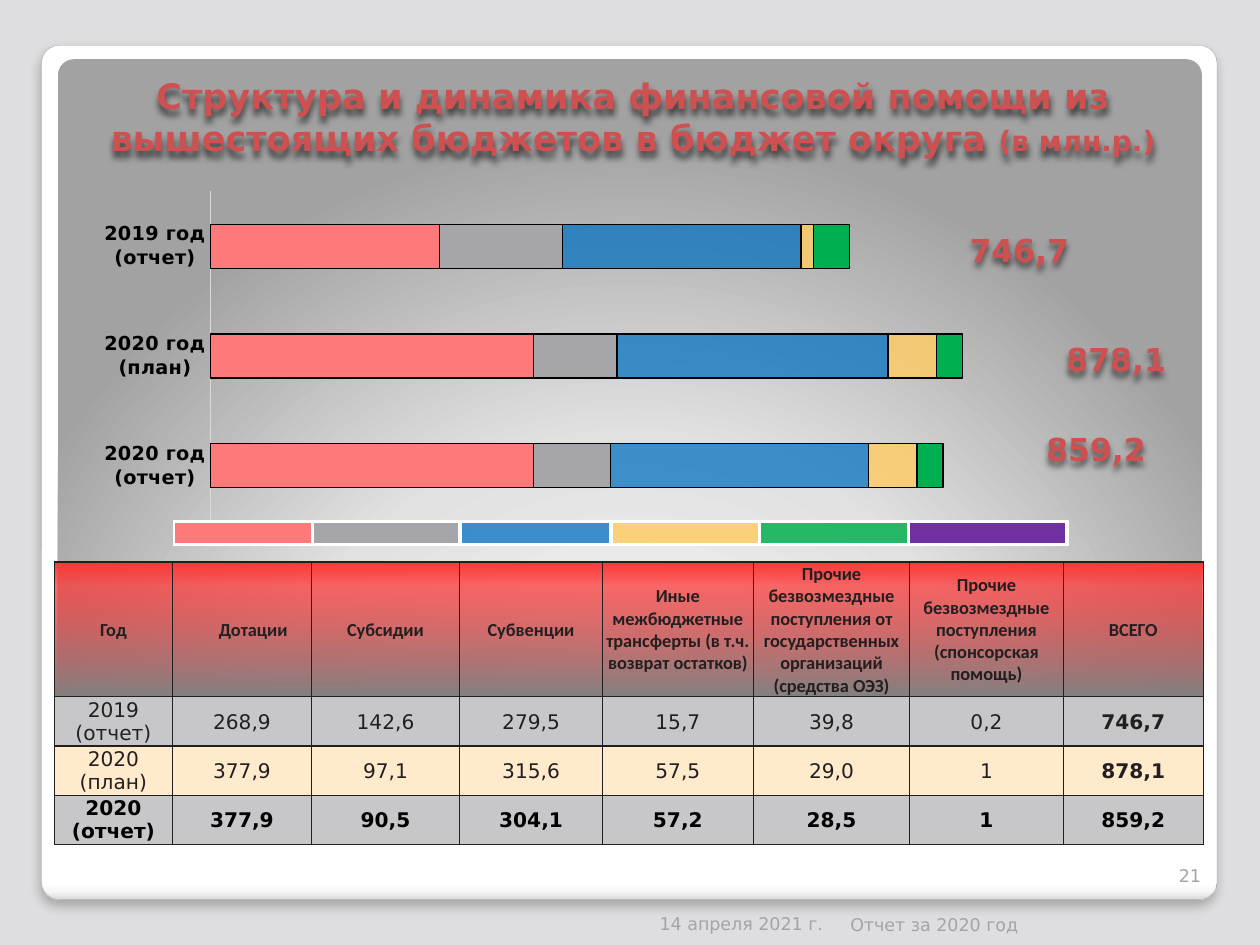
from dataclasses import dataclass
from typing import Optional, Sequence, Union

import lxml.etree
import pptx
import pptx.chart.data
import pptx.dml.color
import pptx.enum.chart
import pptx.enum.shapes
import pptx.enum.text
import pptx.oxml
import pptx.oxml.ns
import pptx.util

Inches, Pt = pptx.util.Inches, pptx.util.Pt
RGB = pptx.dml.color.RGBColor.from_string
ALIGN, ANCHOR = pptx.enum.text.PP_ALIGN, pptx.enum.text.MSO_ANCHOR
NS = pptx.oxml.ns.nsdecls("a")
qn = pptx.oxml.ns.qn


@dataclass(frozen=True)
class Color:
    rgb: str
    alpha: int = 100


@dataclass(frozen=True)
class Gradient:
    stops: Sequence[tuple[int, Color]]
    angle: Optional[int] = None  # None means circular, centred below the panel


@dataclass(frozen=True)
class Theme:
    font: str = "DejaVu Sans"
    head_font: str = "Calibri"
    accent: str = "CE5050"
    ink: str = "231F20"
    black: str = "000000"
    muted: str = "A4A4A6"
    back: str = "DEDEE0"
    white: str = "FFFFFF"
    axis: str = "D9D9D9"
    frame: str = "A4A4A4"
    gray_row: str = "C7C7CA"
    cream_row: str = "FFEACC"
    title: float = 20
    unit: float = 16
    total: float = 18
    body: float = 11.5
    category: float = 11
    head: float = 10.5
    small: float = 10
    frame_fill: Gradient = Gradient([(0, Color("FFFFFF")), (98, Color("FFFFFF")),
                                     (99, Color("F7F7F7")), (100, Color("DADADA"))], 90)
    glow: Gradient = Gradient([(0, Color("FFFFFF")), (55, Color("E1E1E1")),
                               (100, Color("A2A2A2"))])
    head_fill: Gradient = Gradient([(0, Color("828282")), (82, Color("FF3434", 72)),
                                    (100, Color("FE3737"))], 270)


@dataclass(frozen=True)
class Series:
    values: Sequence[int]
    fill: Color
    legend: Color


@dataclass(frozen=True)
class Label:
    text: str
    box: tuple[float, float, float, float]
    size: float
    color: str
    align: ALIGN = ALIGN.CENTER
    strong: bool = False


T = Theme()
SERIES = [
    Series((100, 100, 71), Color("FE7979"), Color("FE7979")),
    Series((24, 26, 38), Color("A5A5AA"), Color("A5A5AA")),
    Series((80, 84, 74), Color("0070C0", 73), Color("0070C0", 74)),
    Series((15, 15, 4), Color("FFCC66", 82), Color("FFCC66", 83)),
    Series((8, 8, 11), Color("00B050"), Color("00B050", 84)),
    Series((0, 0, 0), Color("7030A0"), Color("7030A0")),
]
LABELS = [
    Label("21", (9.13, 6.68, 0.5, 0.4), T.small, T.muted, ALIGN.RIGHT),
    Label("14 апреля 2021 г.", (4.13, 7.06, 2.5, 0.4), T.small, T.muted, ALIGN.RIGHT),
    Label("Отчет за 2020 год", (6.65, 7.07, 2.5, 0.4), T.small, T.muted, ALIGN.LEFT),
    Label("746,7", (7.54, 1.78, 1.1, 0.4), T.total, T.accent, strong=True),
    Label("878,1", (8.31, 2.65, 1.1, 0.4), T.total, T.accent, strong=True),
    Label("859,2", (8.15, 3.36, 1.1, 0.4), T.total, T.accent, strong=True),
]
ROWS = [
    ["Год", "Дотации", "Субсидии", "Субвенции",
     "Иные межбюджетные трансферты (в т.ч. возврат остатков)",
     "Прочие безвозмездные поступления от государственных организаций (средства ОЭЗ)",
     "Прочие безвозмездные поступления (спонсорская помощь)", "ВСЕГО"],
    ["2019 (отчет)", "268,9", "142,6", "279,5", "15,7", "39,8", "0,2", "746,7"],
    ["2020 (план)", "377,9", "97,1", "315,6", "57,5", "29,0", "1", "878,1"],
    ["2020 (отчет)", "377,9", "90,5", "304,1", "57,2", "28,5", "1", "859,2"],
]


def color_xml(c: Color) -> str:
    return f'<a:srgbClr val="{c.rgb}"><a:alpha val="{c.alpha * 1000}"/></a:srgbClr>'


def paint(fill, props, paint_: Union[Color, Gradient]) -> None:
    """Fill a shape, cell or series whose property element is props."""
    if isinstance(paint_, Color):
        xml = f"<a:solidFill {NS}>{color_xml(paint_)}</a:solidFill>"
    else:
        stops = "".join(f'<a:gs pos="{pos * 1000}">{color_xml(c)}</a:gs>' for pos, c in paint_.stops)
        shade = ('<a:path path="circle"><a:fillToRect l="50000" t="175000" r="50000" b="-75000"/></a:path>'
                 if paint_.angle is None else f'<a:lin ang="{paint_.angle * 60000}" scaled="0"/>')
        xml = f'<a:gradFill {NS} rotWithShape="1"><a:gsLst>{stops}</a:gsLst>{shade}</a:gradFill>'
    fill.background()
    props.replace(props.find(qn("a:noFill")), pptx.oxml.parse_xml(xml))


def add_shadow(sp, alpha: int, blur: float, dist: float) -> None:
    sp._element.spPr.append(pptx.oxml.parse_xml(
        f'<a:effectLst {NS}><a:outerShdw blurRad="{Pt(blur)}" dist="{Pt(dist)}" dir="5400000" '
        f'rotWithShape="0">{color_xml(Color(T.black, alpha))}</a:outerShdw></a:effectLst>'))


def style(font, size: float, color: str, bold: bool = False, name: str = T.font) -> None:
    font.size, font.bold, font.name = Pt(size), bold, name
    font.color.rgb = RGB(color)


def add_panel(slide, box: Sequence[float], fill: Gradient):
    sp = slide.shapes.add_shape(pptx.enum.shapes.MSO_SHAPE.ROUNDED_RECTANGLE, *map(Inches, box))
    sp.adjustments[0] = 0.021
    paint(sp.fill, sp._element.spPr, fill)
    sp.line.fill.background()
    return sp


def add_title(slide) -> None:
    sp = slide.shapes.title
    slide.shapes._spTree.append(sp._element)  # bring above the panels
    sp.left, sp.top, sp.width, sp.height = map(Inches, (0.51, 0.52, 9.03, 0.79))
    tf = sp.text_frame
    tf.auto_size, tf.vertical_anchor = pptx.enum.text.MSO_AUTO_SIZE.NONE, ANCHOR.BOTTOM
    p = tf.paragraphs[0]
    p.text = "Структура и динамика финансовой помощи из\vвышестоящих бюджетов в бюджет округа "
    p.alignment = ALIGN.CENTER
    style(p.font, T.title, T.accent, True)
    r = p.add_run()
    r.text, r.font.size = "(в млн.р.)", Pt(T.unit)
    add_shadow(sp, 60, 4, 3)


def add_label(slide, label: Label) -> None:
    sp = slide.shapes.add_textbox(*map(Inches, label.box))
    tf = sp.text_frame
    tf.word_wrap, tf.vertical_anchor = True, ANCHOR.BOTTOM
    p = tf.paragraphs[0]
    p.text, p.alignment = label.text, label.align
    style(p.font, label.size, label.color, label.strong)
    if label.strong:
        add_shadow(sp, 60, 4, 3)


def add_bars(slide) -> None:
    data = pptx.chart.data.CategoryChartData()
    data.categories = ["2020 год (отчет)", "2020 год (план)", "2019 год (отчет)"]
    for i, s in enumerate(SERIES, 1):
        data.add_series(f"Series {i}", s.values)
    chart = slide.shapes.add_chart(pptx.enum.chart.XL_CHART_TYPE.BAR_STACKED,
                                   *map(Inches, (0.43, 1.39, 9.06, 3.78)), data).chart
    chart.has_legend = chart.has_title = False
    style(chart.font, T.small, T.black)
    plot = chart.plots[0]
    plot.gap_width, plot.overlap, plot.vary_by_categories = 150, 100, False
    for ser, s in zip(plot.series, SERIES):
        paint(ser.format.fill, ser._element.get_or_add_spPr(), s.fill)
        ser.format.line.color.rgb, ser.format.line.width = RGB(T.black), Pt(0.75)
    cat, val = chart.category_axis, chart.value_axis
    cat.major_tick_mark = pptx.enum.chart.XL_TICK_MARK.NONE
    cat.format.line.color.rgb, cat.format.line.width = RGB(T.axis), Pt(0.75)
    style(cat.tick_labels.font, T.category, T.black, True)
    val.visible = val.has_major_gridlines = False
    val.minimum_scale, val.maximum_scale = 0, 265
    # Fixed inner plot area
    area = chart._chartSpace.chart.plotArea
    for old in area.findall(qn("c:layout")):
        area.remove(old)
    places = "".join(f'<c:{k} val="{v}"/>' for k, v in
                     [("layoutTarget", "inner"), ("xMode", "edge"), ("yMode", "edge"),
                      ("x", 0.137), ("y", 0.034), ("w", 0.749), ("h", 0.692)])
    area.insert(0, pptx.oxml.parse_xml(f'<c:layout {pptx.oxml.ns.nsdecls("c")}>'
                                       f"<c:manualLayout>{places}</c:manualLayout></c:layout>"))


def add_grid(slide, left: float, top: float, cols: Sequence[float], rows: Sequence[float]):
    table = slide.shapes.add_table(len(rows), len(cols), *map(Inches, (left, top, sum(cols), sum(rows)))).table
    table.first_row = table.horz_banding = False
    for col, width in zip(table.columns, cols):
        col.width = Inches(width)
    for row, height in zip(table.rows, rows):
        row.height = Inches(height)
    return table


def format_cell(cell, fill: Union[Color, Gradient], color: str, width: float, sides: str = "LRTB") -> None:
    tc_pr = cell._tc.get_or_add_tcPr()
    paint(cell.fill, tc_pr, fill)
    for i, side in enumerate(sides):
        tc_pr.insert(i, pptx.oxml.parse_xml(f'<a:ln{side} {NS} w="{Pt(width)}"><a:solidFill>'
                                            f"{color_xml(Color(color))}</a:solidFill></a:ln{side}>"))
    cell.vertical_anchor = ANCHOR.MIDDLE
    cell.margin_left = cell.margin_right = cell.margin_top = Inches(0.01)
    cell.margin_bottom = 0


def add_legend(slide) -> None:
    table = add_grid(slide, 1.38, 4.14, [1.1, 1.17, 1.2, 1.18, 1.18, 1.26], [0.18])
    for i, (cell, s) in enumerate(zip(table.rows[0].cells, SERIES)):
        format_cell(cell, s.legend, T.white, 2.25, "LRTB" if i else "RTB")
        end = lxml.etree.SubElement(cell.text_frame.paragraphs[0]._p, qn("a:endParaRPr"))
        end.set("sz", "800")


def add_figures(slide) -> None:
    table = add_grid(slide, 0.43, 4.46, [0.94, 1.1, 1.18, 1.13, 1.2, 1.24, 1.22, 1.11], [1.07] + [0.39] * 3)
    fills = [T.head_fill, Color(T.gray_row), Color(T.cream_row), Color(T.gray_row)]
    for r, (texts, fill) in enumerate(zip(ROWS, fills)):
        head, latest = r == 0, r == len(ROWS) - 1
        for c, text in enumerate(texts):
            cell = table.cell(r, c)
            format_cell(cell, fill, T.ink, 0.75)
            if head and c == 1:
                cell.margin_left = Inches(0.19)
            p = cell.text_frame.paragraphs[0]
            p.text, p.alignment = text, ALIGN.CENTER
            style(p.font, T.head if head else T.body, T.black if latest else T.ink,
                  head or latest or c == len(texts) - 1, T.head_font if head else T.font)


def main() -> None:
    prs = pptx.Presentation()
    prs.slide_width, prs.slide_height = Inches(10), Inches(7.5)
    slide = prs.slides.add_slide(prs.slide_layouts[5])
    slide.background.fill.solid()
    slide.background.fill.fore_color.rgb = RGB(T.back)
    # Backdrop
    frame = add_panel(slide, (0.33, 0.36, 9.33, 6.78), T.frame_fill)
    frame.line.color.rgb, frame.line.width = RGB(T.frame), Pt(0.16)
    add_shadow(frame, 25, 6, 4)
    add_panel(slide, (0.46, 0.47, 9.08, 6), T.glow).shadow.inherit = False
    # Content
    add_title(slide)
    add_bars(slide)
    add_legend(slide)
    add_figures(slide)
    for label in LABELS:
        add_label(slide, label)
    prs.save("out.pptx")


if __name__ == "__main__":
    main()
